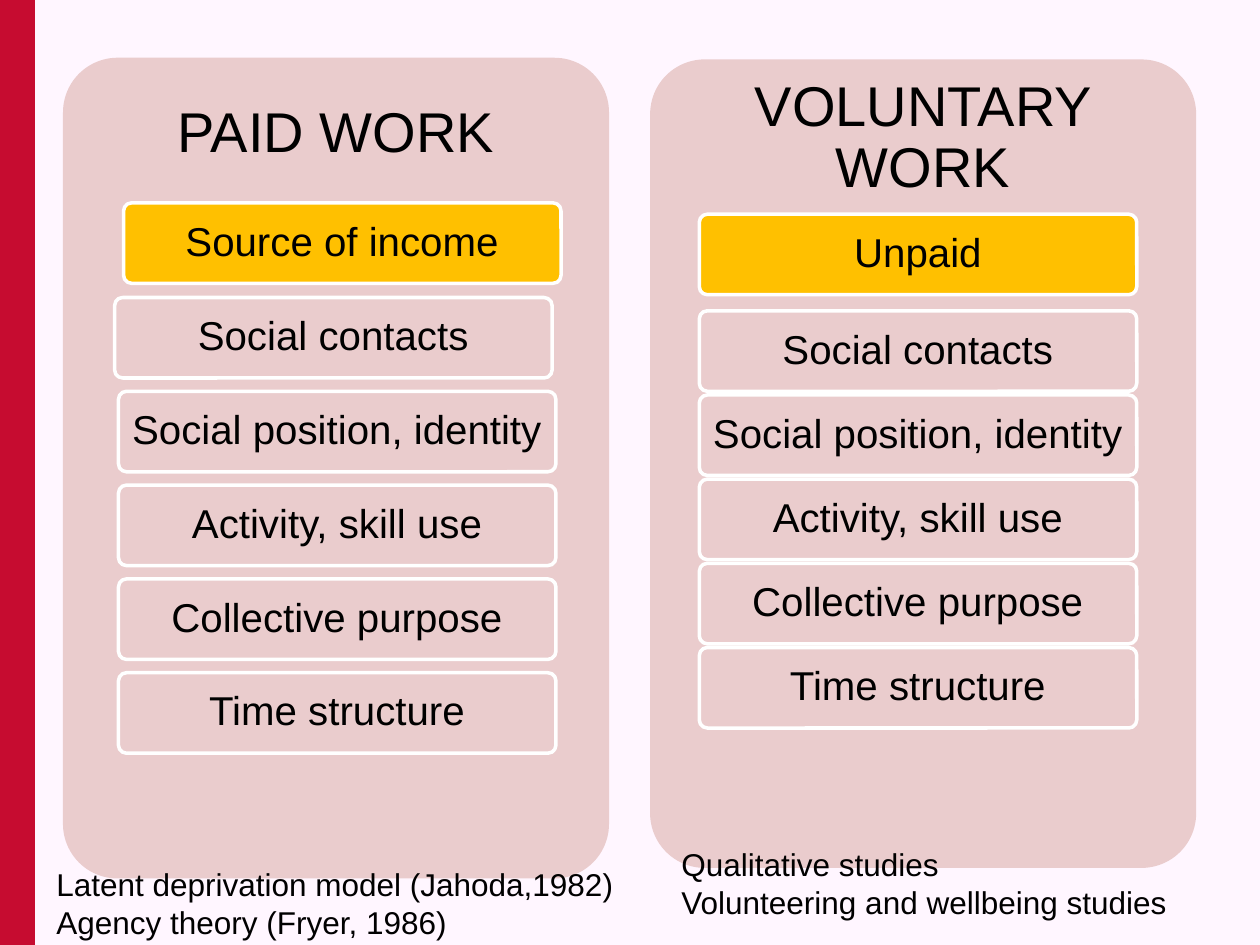
"""Build a slide comparing the benefits of paid and voluntary work."""
from pptx import Presentation
from pptx.dml.color import RGBColor
from pptx.enum.shapes import MSO_SHAPE as Shape
from pptx.enum.text import MSO_ANCHOR as Anchor, PP_ALIGN as Align
from pptx.util import Pt

RED = RGBColor(0xC6, 0x0C, 0x30)
PINK = RGBColor(0xEA, 0xCC, 0xCD)
GOLD = RGBColor(0xFF, 0xC0, 0x00)
WHITE = RGBColor(0xFF, 0xFF, 0xFF)
BLACK = RGBColor(0, 0, 0)
BACKGROUND = RGBColor(0xFF, 0xF6, 0xFF)

SHARED_BENEFITS = ["Social contacts", "Social position, identity", "Activity, skill use",
                   "Collective purpose", "Time structure"]
COLUMNS = [
    {"title": "PAID WORK", "title_height": 87, "panel": (36, 33, 312, 469),
     "income": "Source of income", "income_at": (70.6, 115.9),
     "lefts": [65.5, 67.7, 67.7, 67.7, 67.7], "top": 170, "step": 53.6,
     "sources": ["Latent deprivation model (Jahoda,1982)", "Agency theory (Fryer, 1986)"],
     "sources_box": (25.2, 491, 345.6, 50)},
    {"title": "VOLUNTARY WORK", "title_height": 91, "panel": (371.5, 34, 312, 462),
     "income": "Unpaid", "income_at": (399.6, 122.4),
     "lefts": [399.6] * 5, "top": 177.6, "step": 48.1,
     "sources": ["Qualitative studies", "Volunteering and wellbeing studies"],
     "sources_box": (382.3, 479.5, 296.6, 51)},
]
CELL_SIZE = (250, 46)


def add_block(slide, kind, box, fill=None, line=None):
    shape = slide.shapes.add_shape(kind, *map(Pt, box))
    shape.shadow.inherit = False
    if kind == Shape.ROUNDED_RECTANGLE:
        shape.adjustments[0] = 0.1
    if fill is None:
        shape.fill.background()
    else:
        shape.fill.solid()
        shape.fill.fore_color.rgb = fill
    if line is None:
        shape.line.fill.background()
    else:
        shape.line.color.rgb = line
        shape.line.width = Pt(2)
    return shape


def set_text(shape, lines, size, align, anchor, margins, spacing=1.0):
    frame = shape.text_frame
    frame.word_wrap = True
    frame.vertical_anchor = anchor
    frame.margin_left = frame.margin_right = Pt(margins[0])
    frame.margin_top = frame.margin_bottom = Pt(margins[1])
    frame.text = "\n".join(lines)
    for paragraph in frame.paragraphs:
        paragraph.alignment = align
        paragraph.line_spacing = spacing
        paragraph.font.name = "Arial"
        paragraph.font.size = Pt(size)
        paragraph.font.color.rgb = BLACK


def add_cell(slide, text, left, top, fill=None):
    cell = add_block(slide, Shape.ROUNDED_RECTANGLE, (left, top, *CELL_SIZE), fill, WHITE)
    set_text(cell, [text], 23, Align.CENTER, Anchor.MIDDLE, (3, 3), 0.9)


def add_column(slide, column):
    left, top, width, height = column["panel"]
    add_block(slide, Shape.ROUNDED_RECTANGLE, (left, top, width, height), PINK)
    title = slide.shapes.add_textbox(*map(Pt, (left, top, width, column["title_height"])))
    set_text(title, [column["title"]], 32, Align.CENTER, Anchor.MIDDLE, (9, 0), 0.9)
    add_cell(slide, column["income"], *column["income_at"], GOLD)
    for row, (text, cell_left) in enumerate(zip(SHARED_BENEFITS, column["lefts"])):
        add_cell(slide, text, cell_left, column["top"] + row * column["step"])
    sources = slide.shapes.add_textbox(*map(Pt, column["sources_box"]))
    set_text(sources, column["sources"], 18, Align.LEFT, Anchor.TOP, (7.2, 3.6))


def main():
    presentation = Presentation()
    presentation.slide_width, presentation.slide_height = Pt(720), Pt(540)
    slide = presentation.slides.add_slide(presentation.slide_layouts[6])
    slide.background.fill.solid()
    slide.background.fill.fore_color.rgb = BACKGROUND
    add_block(slide, Shape.RECTANGLE, (0, 0, 20, 540), RED)
    for column in COLUMNS:
        add_column(slide, column)
    presentation.save("out.pptx")


if __name__ == "__main__":
    main()
